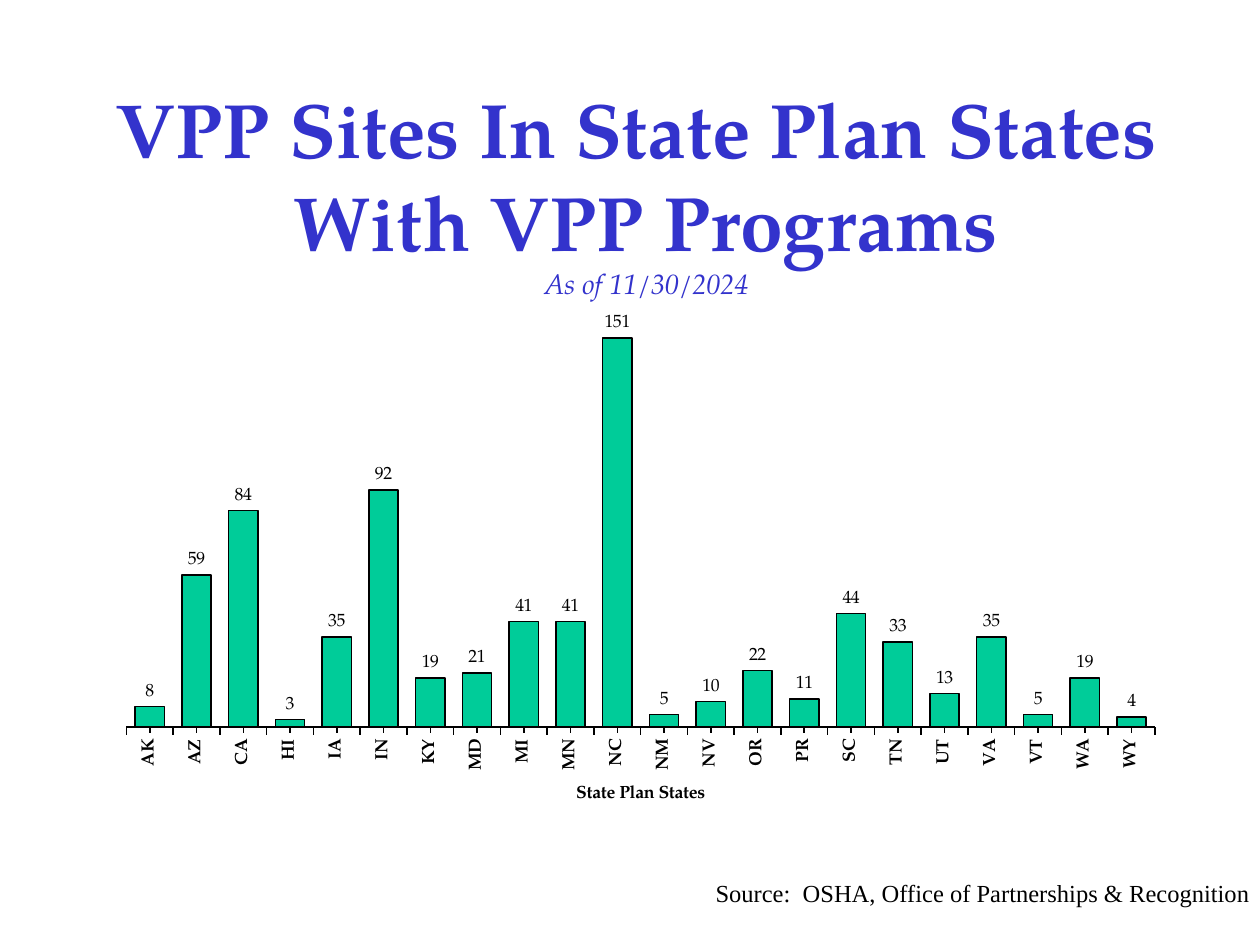
"""Build a slide charting VPP sites per state plan state."""
from dataclasses import dataclass

import pptx
import pptx.chart.data
import pptx.dml.color
import pptx.enum.chart
import pptx.enum.text
import pptx.oxml
import pptx.oxml.ns
import pptx.util

Cm = pptx.util.Cm
Pt = pptx.util.Pt
Align = pptx.enum.text.PP_ALIGN
Anchor = pptx.enum.text.MSO_ANCHOR

COLORS = {"title": "3333CC", "bar": "00CC99", "ink": "000000"}
SERIF = "TeX Gyre Pagella"
SITES = {
    "AK": 8, "AZ": 59, "CA": 84, "HI": 3, "IA": 35, "IN": 92, "KY": 19,
    "MD": 21, "MI": 41, "MN": 41, "NC": 151, "NM": 5, "NV": 10, "OR": 22,
    "PR": 11, "SC": 44, "TN": 33, "UT": 13, "VA": 35, "VT": 5, "WA": 19,
    "WY": 4,
}
PLOT_AREA = {"x": 0.03, "y": 0.02, "w": 0.96, "h": 0.77}


@dataclass
class Line:
    text: str
    size: float
    font: str = SERIF
    color: str = "ink"
    bold: bool = False
    italic: bool = False


@dataclass
class Block:
    left: float
    top: float
    width: float
    height: float
    lines: list[Line]
    align: Align
    anchor: Anchor = Anchor.TOP
    bottom_inset: float = 0


BLOCKS = [
    Block(1.7, 4.24, 22.66, 2.97, [
        Line("VPP Sites In State Plan States \vWith VPP Programs", 44,
             color="title", bold=True),
        Line("As of 11/30/2024", 16, color="title", italic=True),
    ], Align.CENTER, Anchor.BOTTOM, 1.16),
    Block(13.54, 17.7, 11.66, 1.3, [
        Line("Source:  OSHA, Office of Partnerships & Recognition", 14,
             "Times New Roman"),
    ], Align.RIGHT),
]


def rgb(name: str) -> pptx.dml.color.RGBColor:
    """Return the named colour."""
    return pptx.dml.color.RGBColor.from_string(COLORS[name])


def set_font(font, line: Line) -> None:
    """Apply the style of a line to a font."""
    font.name, font.size = line.font, Pt(line.size)
    font.bold, font.italic = line.bold, line.italic
    font.color.rgb = rgb(line.color)


def draw_block(s, block: Block) -> None:
    """Draw one text box."""
    tf = s.shapes.add_textbox(Cm(block.left), Cm(block.top), Cm(block.width),
                              Cm(block.height)).text_frame
    tf.word_wrap = True
    tf.vertical_anchor = block.anchor
    tf.margin_left = tf.margin_right = tf.margin_top = 0
    tf.margin_bottom = Cm(block.bottom_inset)
    for i, line in enumerate(block.lines):
        p = tf.add_paragraph() if i else tf.paragraphs[0]
        p.text, p.alignment = line.text, block.align
        set_font(p.font, line)


def style_line(line) -> None:
    """Give a chart line its colour and width."""
    line.color.rgb = rgb("ink")
    line.width = Pt(0.88)


def place_plot(chart) -> None:
    """Fix the inner plot area as fractions of the chart."""
    modes = "".join(f'<c:{k}Mode val="edge"/>' for k in "xy")
    sizes = "".join(f'<c:{k} val="{v}"/>' for k, v in PLOT_AREA.items())
    layout = pptx.oxml.parse_xml(
        f'<c:layout {pptx.oxml.ns.nsdecls("c")}><c:manualLayout>'
        f'<c:layoutTarget val="inner"/>{modes}{sizes}'
        '</c:manualLayout></c:layout>')
    area = chart.element.chart.plotArea
    for old in area.findall(pptx.oxml.ns.qn("c:layout")):
        area.remove(old)
    area.insert(0, layout)


def style_axes(chart) -> None:
    """Format the state axis and hide the value axis."""
    tick = pptx.enum.chart.XL_TICK_MARK
    axis = chart.category_axis
    axis.major_tick_mark = axis.minor_tick_mark = tick.OUTSIDE
    axis.tick_label_position = pptx.enum.chart.XL_TICK_LABEL_POSITION.LOW
    axis.has_major_gridlines = False
    style_line(axis.format.line)
    bold = Line("State Plan States", 10.1, bold=True)
    set_font(axis.tick_labels.font, bold)
    body = axis.tick_labels.font._element.getparent().getparent().getparent()
    body.find(pptx.oxml.ns.qn("a:bodyPr")).set("rot", "-5400000")
    p = axis.axis_title.text_frame.paragraphs[0]
    p.text = bold.text
    set_font(p.font, bold)
    values = chart.value_axis
    values.minimum_scale, values.maximum_scale = 0, 160
    values.has_major_gridlines = False
    values.visible = False


def draw_chart(s) -> None:
    """Draw the column chart of sites by state."""
    data = pptx.chart.data.CategoryChartData()
    data.categories = list(SITES)
    data.add_series("VPP Sites", list(SITES.values()))
    chart = s.shapes.add_chart(
        pptx.enum.chart.XL_CHART_TYPE.COLUMN_CLUSTERED, Cm(1.9), Cm(6.13),
        Cm(21.6), Cm(10.8), data).chart
    chart.has_legend = chart.has_title = False
    label_style = Line("", 10.1)
    set_font(chart.font, label_style)
    style_axes(chart)
    place_plot(chart)
    plot = chart.plots[0]
    plot.gap_width = 60
    plot.vary_by_categories = False
    series = plot.series[0]
    series.format.fill.solid()
    series.format.fill.fore_color.rgb = rgb("bar")
    style_line(series.format.line)
    labels = series.data_labels
    labels.show_value = True
    labels.position = pptx.enum.chart.XL_LABEL_POSITION.OUTSIDE_END
    set_font(labels.font, label_style)


def main() -> None:
    """Build and save the slide."""
    prs = pptx.Presentation()
    prs.slide_width, prs.slide_height = Cm(25.4), Cm(19.05)
    s = prs.slides.add_slide(prs.slide_layouts[6])
    draw_chart(s)
    for block in BLOCKS:
        draw_block(s, block)
    prs.save("out.pptx")


if __name__ == "__main__":
    main()
